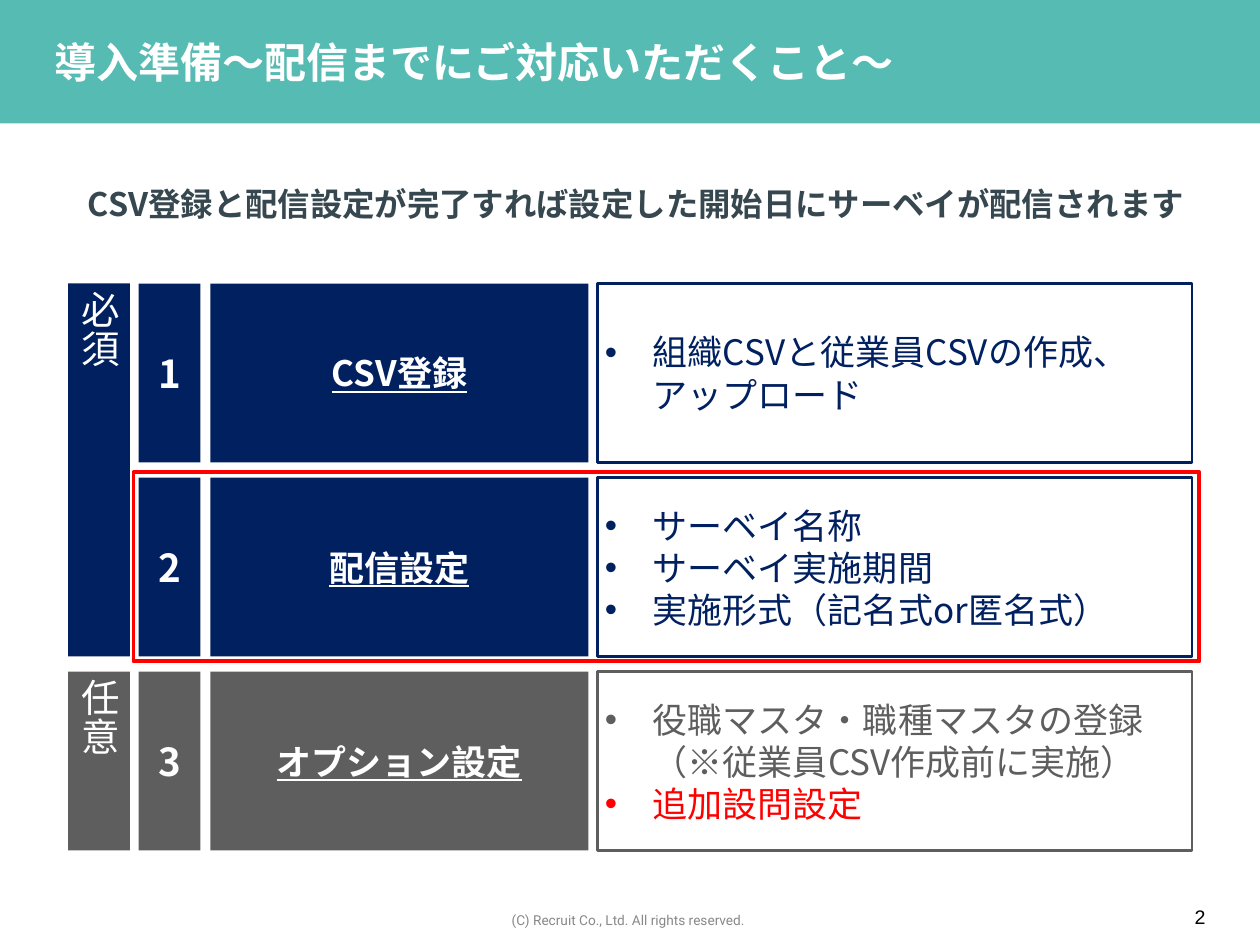
from dataclasses import dataclass

from lxml import etree
from pptx import Presentation
from pptx.dml.color import RGBColor
from pptx.enum.shapes import MSO_SHAPE
from pptx.enum.text import MSO_ANCHOR, MSO_AUTO_SIZE, PP_ALIGN
from pptx.oxml.ns import qn
from pptx.shapes.autoshape import Shape
from pptx.slide import Slide
from pptx.text.text import TextFrame, _Paragraph
from pptx.util import Inches, Pt

RECTANGLE = MSO_SHAPE.RECTANGLE
MIDDLE = MSO_ANCHOR.MIDDLE
LEFT, CENTER = PP_ALIGN.LEFT, PP_ALIGN.CENTER
NO_AUTOFIT = MSO_AUTO_SIZE.NONE

TEAL = RGBColor(0x55, 0xBB, 0xB3)
NAVY = RGBColor(0x00, 0x20, 0x60)
GRAY = RGBColor(0x5E, 0x5E, 0x5E)
RED = RGBColor(0xFF, 0x00, 0x00)
WHITE = RGBColor(0xFF, 0xFF, 0xFF)
BLACK = RGBColor(0x00, 0x00, 0x00)
SLATE = RGBColor(0x37, 0x47, 0x4F)
FOOTER_GRAY = RGBColor(0x88, 0x88, 0x88)

JAPANESE_FONT = "Noto Sans CJK JP"
ROW_TOP, ROW_HEIGHT, ROW_PITCH = 2.25, 1.42, 1.54
LABEL_LEFT, NUMBER_LEFT, NAME_LEFT, DETAIL_LEFT = 0.54, 1.1, 1.67, 4.74
NARROW_WIDTH, NAME_WIDTH, DETAIL_WIDTH = 0.49, 3, 4.72


@dataclass(frozen=True)
class Box:
    left: float
    top: float
    width: float
    height: float

    def lengths(self) -> list[int]:
        return [Inches(v) for v in (self.left, self.top, self.width, self.height)]


@dataclass(frozen=True)
class TextStyle:
    size: float
    color: RGBColor
    font: str = JAPANESE_FONT
    bold: bool = False
    underline: bool = False


@dataclass(frozen=True)
class Detail:
    text: str
    color: RGBColor


@dataclass(frozen=True)
class Step:
    name: str
    color: RGBColor
    details: tuple[Detail, ...]


@dataclass(frozen=True)
class Requirement:
    text: str
    color: RGBColor
    first_row: int
    rows: int


STEPS = (
    Step("CSV登録", NAVY, (Detail("組織CSVと従業員CSVの作成、アップロード", NAVY),)),
    Step("配信設定", NAVY, (
        Detail("サーベイ名称", NAVY),
        Detail("サーベイ実施期間", NAVY),
        Detail("実施形式（記名式or匿名式）", NAVY),
    )),
    Step("オプション設定", GRAY, (
        Detail("役職マスタ・職種マスタの登録（※従業員CSV作成前に実施）", GRAY),
        Detail("追加設問設定", RED),
    )),
)
REQUIREMENTS = (Requirement("必須", NAVY, 0, 2), Requirement("任意", GRAY, 2, 1))


def row_top(row: int) -> float:
    return ROW_TOP + row * ROW_PITCH


def format_runs(paragraph: _Paragraph, style: TextStyle) -> None:
    for run in paragraph.runs:
        run.font.size = Pt(style.size)
        run.font.name = style.font
        run.font.bold = style.bold
        run.font.underline = style.underline
        run.font.color.rgb = style.color
        east_asian = etree.SubElement(run.font._element, qn("a:ea"))
        east_asian.set("typeface", style.font)


def set_insets(frame: TextFrame, horizontal: float, vertical: float) -> None:
    frame.margin_left = frame.margin_right = Inches(horizontal)
    frame.margin_top = frame.margin_bottom = Inches(vertical)


def write_line(frame: TextFrame, text: str, style: TextStyle,
               alignment: PP_ALIGN = CENTER) -> None:
    frame.text = text
    frame.paragraphs[0].alignment = alignment
    format_runs(frame.paragraphs[0], style)


def add_rectangle(slide: Slide, box: Box, fill: RGBColor | None = None,
                  line: RGBColor | None = None, line_width: float = 1.5) -> Shape:
    rectangle = slide.shapes.add_shape(RECTANGLE, *box.lengths())
    rectangle.shadow.inherit = False
    if fill is None:
        rectangle.fill.background()
    else:
        rectangle.fill.solid()
        rectangle.fill.fore_color.rgb = fill
    if line is None:
        rectangle.line.fill.background()
    else:
        rectangle.line.color.rgb = line
        rectangle.line.width = Pt(line_width)
    frame = rectangle.text_frame
    frame.word_wrap = True
    frame.vertical_anchor = MIDDLE
    set_insets(frame, 0.06, 0.06)
    return rectangle


def add_text(slide: Slide, box: Box, text: str, style: TextStyle) -> TextFrame:
    frame = slide.shapes.add_textbox(*box.lengths()).text_frame
    frame.word_wrap = True
    write_line(frame, text, style)
    return frame


def write_details(frame: TextFrame, details: tuple[Detail, ...]) -> None:
    frame.text = "\n".join(detail.text for detail in details)
    for paragraph, detail in zip(frame.paragraphs, details):
        paragraph.alignment = LEFT
        properties = paragraph._p.get_or_add_pPr()
        properties.set("marL", str(Inches(0.38)))
        properties.set("indent", str(-Inches(0.38)))
        etree.SubElement(properties, qn("a:buFont")).set("typeface", "Arial")
        etree.SubElement(properties, qn("a:buChar")).set("char", "•")
        format_runs(paragraph, TextStyle(20, detail.color))


def add_step(slide: Slide, row: int, step: Step) -> None:
    top = row_top(row)
    name = add_rectangle(slide, Box(NAME_LEFT, top, NAME_WIDTH, ROW_HEIGHT), step.color)
    write_line(name.text_frame, step.name, TextStyle(20, WHITE, bold=True, underline=True))
    number = add_rectangle(slide, Box(NUMBER_LEFT, top, NARROW_WIDTH, ROW_HEIGHT), step.color)
    write_line(number.text_frame, str(row + 1), TextStyle(22, WHITE, bold=True))
    details = add_rectangle(slide, Box(DETAIL_LEFT, top, DETAIL_WIDTH, ROW_HEIGHT), line=step.color)
    write_details(details.text_frame, step.details)


def add_requirement(slide: Slide, requirement: Requirement) -> None:
    height = (requirement.rows - 1) * ROW_PITCH + ROW_HEIGHT
    box = Box(LABEL_LEFT, row_top(requirement.first_row), NARROW_WIDTH, height)
    frame = add_rectangle(slide, box, requirement.color).text_frame
    frame._txBody.bodyPr.set("vert", "eaVert")
    write_line(frame, requirement.text, TextStyle(22, WHITE), LEFT)


def add_header(slide: Slide) -> None:
    banner = add_rectangle(slide, Box(0, 0, 10, 0.98), TEAL)
    slide.shapes._spTree.insert(2, banner._element)
    title = slide.shapes.title
    title.left, title.top, title.width, title.height = Box(0.43, 0.29, 6.73, 0.4).lengths()
    frame = title.text_frame
    frame.word_wrap = False
    frame.auto_size = NO_AUTOFIT
    frame.vertical_anchor = MIDDLE
    set_insets(frame, 0, 0)
    write_line(frame, "導入準備～配信までにご対応いただくこと～", TextStyle(24, WHITE, bold=True), LEFT)


def main() -> None:
    deck = Presentation()
    deck.slide_width, deck.slide_height = Inches(10), Inches(7.5)
    slide = deck.slides.add_slide(deck.slide_layouts.get_by_name("Title Only"))
    add_header(slide)
    copyright_line = add_text(slide, Box(2.22, 7.19, 5.56, 0.23),
                              "(C) Recruit Co., Ltd. All rights reserved. ",
                              TextStyle(7.8, FOOTER_GRAY, "Roboto"))
    copyright_line.vertical_anchor = MIDDLE
    set_insets(copyright_line, 0.03, 0.05)
    page_number = add_text(slide, Box(9.23, 7.12, 0.59, 0.29), "2", TextStyle(11.2, BLACK, "Arial"))
    set_insets(page_number, 0.06, 0.06)
    for row, step in enumerate(STEPS):
        add_step(slide, row, step)
    for requirement in REQUIREMENTS:
        add_requirement(slide, requirement)
    add_text(slide, Box(0.53, 1.41, 9.03, 0.41),
             "CSV登録と配信設定が完了すれば設定した開始日にサーベイが配信されます",
             TextStyle(18.5, SLATE, bold=True))
    add_rectangle(slide, Box(1.06, row_top(1) - 0.04, 8.46, 1.5), line=RED, line_width=2.25)
    deck.save("out.pptx")


if __name__ == "__main__":
    main()
